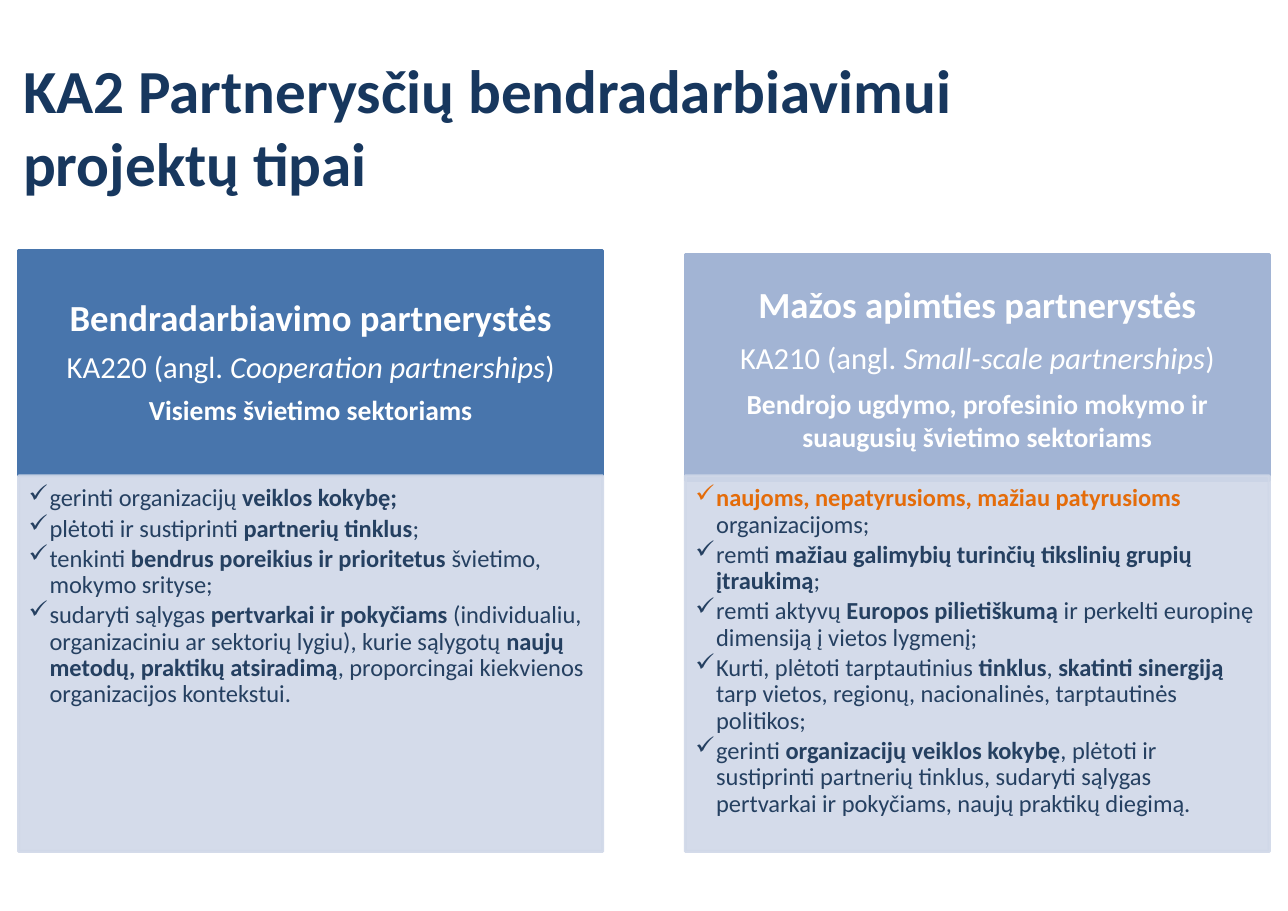
from lxml.etree import SubElement
from pptx import Presentation
from pptx.dml.color import RGBColor
from pptx.enum.shapes import MSO_SHAPE
from pptx.enum.text import MSO_ANCHOR, PP_ALIGN
from pptx.oxml.ns import qn
from pptx.util import Inches, Pt

# Columns: left edge, header top and fill, header lines, bullets; *...* marks emphasis
PARTNERSHIPS = [
    dict(
        left=1.45, top=27.45, fill="4875AC", spacing=0.9,
        header=["Bendradarbiavimo partnerystės",
                "KA220 (angl. *Cooperation partnerships*)",
                "Visiems švietimo sektoriams"],
        goals=["gerinti organizacijų *veiklos kokybę;*",
               "plėtoti ir sustiprinti *partnerių tinklus*;",
               "tenkinti *bendrus poreikius ir prioritetus *švietimo, mokymo srityse;",
               "sudaryti sąlygas *pertvarkai ir pokyčiams *(individualiu, organizaciniu "
               "ar sektorių lygiu), kurie sąlygotų *naujų metodų, praktikų atsiradimą*, "
               "proporcingai kiekvienos organizacijos kontekstui."]),
    dict(
        left=53.21, top=27.93, fill="A2B4D4", spacing=1.0,
        header=["Mažos apimties partnerystės",
                "KA210 (angl. *Small-scale partnerships*)",
                "Bendrojo ugdymo, profesinio mokymo ir suaugusių švietimo sektoriams"],
        goals=["*naujoms, nepatyrusioms, mažiau patyrusioms *organizacijoms;",
               "remti *mažiau galimybių turinčių tikslinių grupių įtraukimą*;",
               "remti aktyvų *Europos pilietiškumą *ir perkelti europinę dimensiją "
               "į vietos lygmenį;",
               "Kurti, plėtoti tarptautinius *tinklus*, *skatinti sinergiją *tarp vietos, "
               "regionų, nacionalinės, tarptautinės politikos;",
               "gerinti *organizacijų veiklos kokybę*, plėtoti ir sustiprinti partnerių "
               "tinklus, sudaryti sąlygas pertvarkai ir pokyčiams, naujų praktikų diegimą."]),
]

# Text formats
TITLE = dict(name="Calibri", size=Pt(40), bold=True, color="17375E")
HEADER = dict(name="Calibri", color="FFFFFF")
HEADER_LINES = [dict(size=Pt(24), bold=True), dict(size=Pt(20)), dict(size=Pt(18), bold=True)]
GOAL = dict(name="Calibri", size=Pt(16), color="254061")
NEWCOMERS = dict(bold=True, color="E46C0A")


def rgb(code):
    return RGBColor.from_string(code)


class PartnershipSlide:
    def __init__(self, deck):
        self.deck = deck
        self.slide = deck.slides.add_slide(deck.slide_layouts[6])

    def place(self, left, top, width, height):
        """Turn percentages of the slide's size into lengths."""
        across, down = self.deck.slide_width / 100, self.deck.slide_height / 100
        return [int(left * across), int(top * down), int(width * across), int(height * down)]

    def frame(self, shape, insets, anchor):
        sides = ("margin_left", "margin_top", "margin_right", "margin_bottom")
        settings = dict(zip(sides, map(Inches, insets)), word_wrap=True, vertical_anchor=anchor)
        for name, value in settings.items():
            setattr(shape.text_frame, name, value)
        return shape.text_frame

    def title(self, box, text):
        heading = self.slide.shapes.add_textbox(*self.place(*box))
        frame = self.frame(heading, (0.11, 0.06, 0.11, 0.06), MSO_ANCHOR.MIDDLE)
        self.add_text(frame.paragraphs[0], text, TITLE)

    def panel(self, box, fill, insets, anchor, opacity=100):
        panel = self.slide.shapes.add_shape(MSO_SHAPE.RECTANGLE, *self.place(*box))
        panel.shadow.inherit = False
        panel.line.width = Pt(2)
        for paint in (panel.fill, panel.line.fill):
            paint.solid()
            paint.fore_color.rgb = rgb(fill)
        if opacity < 100:
            for colour in panel._element.spPr.iter(qn("a:srgbClr")):
                SubElement(colour, qn("a:alpha"), val=str(opacity * 1000))
        return self.frame(panel, insets, anchor)

    def paragraph(self, frame, first, **layout):
        paragraph = frame.paragraphs[0] if first else frame.add_paragraph()
        for name, value in layout.items():
            setattr(paragraph, name, value)
        return paragraph

    def check_mark(self, paragraph):
        properties = paragraph._p.get_or_add_pPr()
        properties.set("marL", str(Inches(0.19)))
        properties.set("indent", str(Inches(-0.19)))
        SubElement(properties, qn("a:buChar"), char="✓")

    def add_text(self, paragraph, text, plain, emphasis=None):
        for index, part in enumerate(text.split("*")):
            look = {**plain, **(emphasis or {})} if index % 2 else plain
            for number, line in enumerate(part.split("\n") if part else []):
                if number:
                    paragraph.add_line_break()
                run = paragraph.add_run()
                run.text = line
                for name, value in look.items():
                    if name == "color":
                        run.font.color.rgb = rgb(value)
                    else:
                        setattr(run.font, name, value)

    def header(self, box, fill, lines, spacing):
        frame = self.panel(box, fill, (0.19, 0.11, 0.19, 0.11), MSO_ANCHOR.MIDDLE)
        for index, (line, look) in enumerate(zip(lines, HEADER_LINES)):
            last = index == len(lines) - 1
            paragraph = self.paragraph(
                frame, index == 0, alignment=PP_ALIGN.CENTER, line_spacing=spacing,
                space_after=Pt(0 if last else look["size"].pt * 0.35))
            self.add_text(paragraph, line, {**HEADER, **look}, dict(italic=True))

    def goals(self, box, goals):
        frame = self.panel(box, "D0D8E8", (0.09, 0.09, 0.12, 0.14), MSO_ANCHOR.TOP, opacity=90)
        for index, goal in enumerate(goals):
            paragraph = self.paragraph(frame, index == 0, alignment=PP_ALIGN.LEFT,
                                       line_spacing=0.9, space_after=Pt(2.4))
            self.check_mark(paragraph)
            emphasis = NEWCOMERS if goal.startswith("*") else dict(bold=True)
            self.add_text(paragraph, goal, GOAL, emphasis)


def main():
    deck = Presentation()
    deck.slide_width, deck.slide_height = Inches(11.69), Inches(8.27)
    page = PartnershipSlide(deck)

    # Title
    page.title((0.86, 5.44, 99.14, 16.69), "KA2 Partnerysčių bendradarbiavimui\nprojektų tipai")

    # Two partnership types side by side
    width = 45.34
    for kind in PARTNERSHIPS:
        page.header((kind["left"], kind["top"], width, 24.79),
                    kind["fill"], kind["header"], kind["spacing"])
        page.goals((kind["left"], 52.24, width, 41.23), kind["goals"])

    deck.save("out.pptx")


if __name__ == "__main__":
    main()
